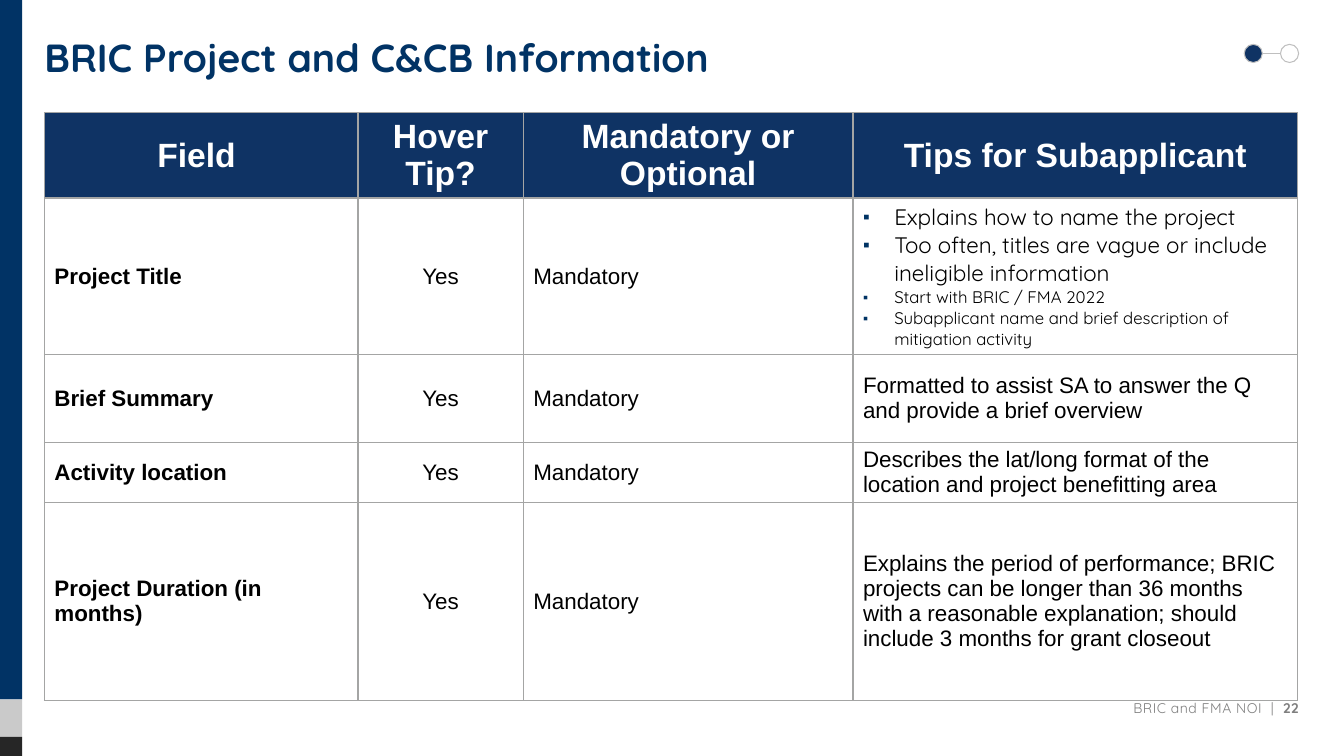
import pptx
import pptx.dml.color
import pptx.enum.shapes
import pptx.enum.text
import pptx.oxml
import pptx.oxml.ns
import pptx.util
from pptx.util import Inches

NAVY, BLUE, BULLET_BLUE = "0F3364", "013365", "003364"
WHITE, BLACK, GRID_GRAY, LINE_GRAY = "FFFFFF", "000000", "A4A5A4", "BFBFBF"
HEADING_FONT, TABLE_FONT = "Quicksand", "Arial"
ALIGN = pptx.enum.text.PP_ALIGN
ANCHOR = pptx.enum.text.MSO_ANCHOR
SHAPE = pptx.enum.shapes.MSO_SHAPE

COLUMN_WIDTHS = [3.11, 1.64, 3.27, 4.41]
ROW_HEIGHTS = [0.58, 1.23, 0.87, 0.5, 1.97]
HEADERS = ["Field ", "Hover Tip?", "Mandatory or Optional", "Tips for Subapplicant"]
TITLE_TIPS = [
    ("Explains how to name the project", 16),
    ("Too often, titles are vague or include ineligible information", 16),
    ("Start with BRIC / FMA 2022", 12),
    ("Subapplicant name and brief description of mitigation activity", 12),
]
FIELDS = [
    ("Project Title", TITLE_TIPS),
    ("Brief Summary",
     "Formatted to assist SA to answer the Q and provide a brief overview"),
    ("Activity location",
     "Describes the lat/long format of the location and project benefitting area"),
    ("Project Duration (in months)",
     "Explains the period of performance; BRIC projects can be longer than 36 months "
     "with a reasonable explanation; should include 3 months for grant closeout"),
]


def color(value):
    return pptx.dml.color.RGBColor.from_string(value)


def drawing_xml(markup):
    """Parse one element in the drawing namespace."""
    tag, rest = markup[1:].split(" ", 1)
    return pptx.oxml.parse_xml(f'<{tag} {pptx.oxml.ns.nsdecls("a")} {rest}')


def add_run(paragraph, text, size, font, text_color, bold=False):
    run = paragraph.add_run()
    run.text = text
    run.font.size = pptx.util.Pt(size)
    run.font.name = font
    run.font.bold = bold
    run.font.color.rgb = color(text_color)
    return run


def set_margins(frame):
    frame.margin_left = frame.margin_right = 0
    frame.margin_top = frame.margin_bottom = Inches(0.05)
    frame.word_wrap = True


def add_filled_shape(slide, kind, left, top, width, height, fill, line=None):
    shape = slide.shapes.add_shape(
        kind, Inches(left), Inches(top), Inches(width), Inches(height))
    shape.shadow.inherit = False
    shape.fill.solid()
    shape.fill.fore_color.rgb = color(fill)
    if line:
        shape.line.color.rgb = color(line)
        shape.line.width = pptx.util.Pt(0.75)
    else:
        shape.line.fill.background()


def add_sidebar(slide, left, top, width):
    for height, fill in [(6.94, BLUE), (0.37, "CACACA"), (0.19, "262626")]:
        add_filled_shape(slide, SHAPE.RECTANGLE, left, top, width, height, fill)
        top += height


def add_title(slide, left, top, width, height):
    title = slide.shapes.title
    title.left, title.top = Inches(left), Inches(top)
    title.width, title.height = Inches(width), Inches(height)
    frame = title.text_frame
    set_margins(frame)
    frame.auto_size = pptx.enum.text.MSO_AUTO_SIZE.NONE
    frame.vertical_anchor = ANCHOR.TOP
    paragraph = frame.paragraphs[0]
    paragraph.alignment = ALIGN.LEFT
    add_run(paragraph, "BRIC Project and C&CB Information", 28, HEADING_FONT, BLUE, True)


def style_cell(cell, fill):
    cell.vertical_anchor = ANCHOR.MIDDLE
    cell.fill.solid()
    cell.fill.fore_color.rgb = color(fill)
    properties = cell._tc.get_or_add_tcPr()
    for index, side in enumerate("LRTB"):
        properties.insert(index, drawing_xml(
            f'<a:ln{side} w="12700"><a:solidFill><a:srgbClr val="{GRID_GRAY}"/>'
            f'</a:solidFill></a:ln{side}>'))


def write_cell(cell, text, size=16, text_color=BLACK, bold=False, centered=False):
    paragraph = cell.text_frame.paragraphs[0]
    paragraph.alignment = ALIGN.CENTER if centered else ALIGN.LEFT
    add_run(paragraph, text, size, TABLE_FONT, text_color, bold)


def write_bullets(cell, items):
    frame = cell.text_frame
    for index, (text, size) in enumerate(items):
        paragraph = frame.add_paragraph() if index else frame.paragraphs[0]
        properties = paragraph._p.get_or_add_pPr()
        properties.set("marL", str(Inches(0.31)))
        properties.set("indent", str(Inches(-0.31)))
        for markup in (
                f'<a:buClr ><a:srgbClr val="{BULLET_BLUE}"/></a:buClr>',
                '<a:buSzPct val="85000"/>',
                '<a:buFont typeface="Arial"/>',
                '<a:buChar char="▪"/>'):
            # The tag name ends at the first space of the markup.
            properties.append(drawing_xml(markup))
        add_run(paragraph, text, size, HEADING_FONT, BLACK)


def add_field_table(slide, left, top):
    table = slide.shapes.add_table(
        len(ROW_HEIGHTS), len(COLUMN_WIDTHS), Inches(left), Inches(top),
        Inches(sum(COLUMN_WIDTHS)), Inches(sum(ROW_HEIGHTS))).table
    table.horz_banding = False
    for column, width in zip(table.columns, COLUMN_WIDTHS):
        column.width = Inches(width)
    for row, height in zip(table.rows, ROW_HEIGHTS):
        row.height = Inches(height)

    for cell, text in zip(table.rows[0].cells, HEADERS):
        style_cell(cell, NAVY)
        write_cell(cell, text, 24, WHITE, bold=True, centered=True)
    for row_index, (field, tips) in enumerate(FIELDS, start=1):
        cells = list(table.rows[row_index].cells)
        for cell in cells:
            style_cell(cell, WHITE)
        write_cell(cells[0], field, bold=True)
        write_cell(cells[1], "Yes", centered=True)
        write_cell(cells[2], "Mandatory")
        if isinstance(tips, str):
            write_cell(cells[3], tips)
        else:
            write_bullets(cells[3], tips)


def add_footer(slide, left, top, width, height):
    box = slide.shapes.add_textbox(
        Inches(left), Inches(top), Inches(width), Inches(height))
    frame = box.text_frame
    set_margins(frame)
    frame.vertical_anchor = ANCHOR.MIDDLE
    paragraph = frame.paragraphs[0]
    paragraph.alignment = ALIGN.RIGHT
    for text, bold in [("BRIC and FMA NOI  |  ", False), ("22", True)]:
        run = add_run(paragraph, text, 10, HEADING_FONT, "7F7F7F", bold)
        run._r.get_or_add_rPr().set("spc", "40")


def add_progress_dots(slide, left, top, diameter):
    """Draw two linked dots, the first one filled as the current step."""
    middle = Inches(top + diameter / 2)
    link = slide.shapes.add_connector(
        pptx.enum.shapes.MSO_CONNECTOR.STRAIGHT,
        Inches(left + diameter), middle, Inches(left + 2 * diameter), middle)
    link.line.color.rgb = color(LINE_GRAY)
    link.line.width = pptx.util.Pt(0.75)
    link._element.spPr.append(drawing_xml("<a:effectLst />"))
    for index, fill in enumerate([NAVY, WHITE]):
        add_filled_shape(slide, SHAPE.OVAL, left + 2 * index * diameter, top,
                         diameter, diameter, fill, LINE_GRAY)


def main():
    presentation = pptx.Presentation()
    presentation.slide_width = Inches(13.33)
    presentation.slide_height = Inches(7.5)
    slide = presentation.slides.add_slide(presentation.slide_layouts[5])
    add_sidebar(slide, 0, 0, 0.22)
    add_title(slide, 0.44, 0.28, 12.43, 0.84)
    add_field_table(slide, 0.44, 1.12)
    add_footer(slide, 4.79, 6.88, 8.09, 0.29)
    add_progress_dots(slide, 12.34, 0.44, 0.18)
    presentation.save("out.pptx")


if __name__ == "__main__":
    main()
